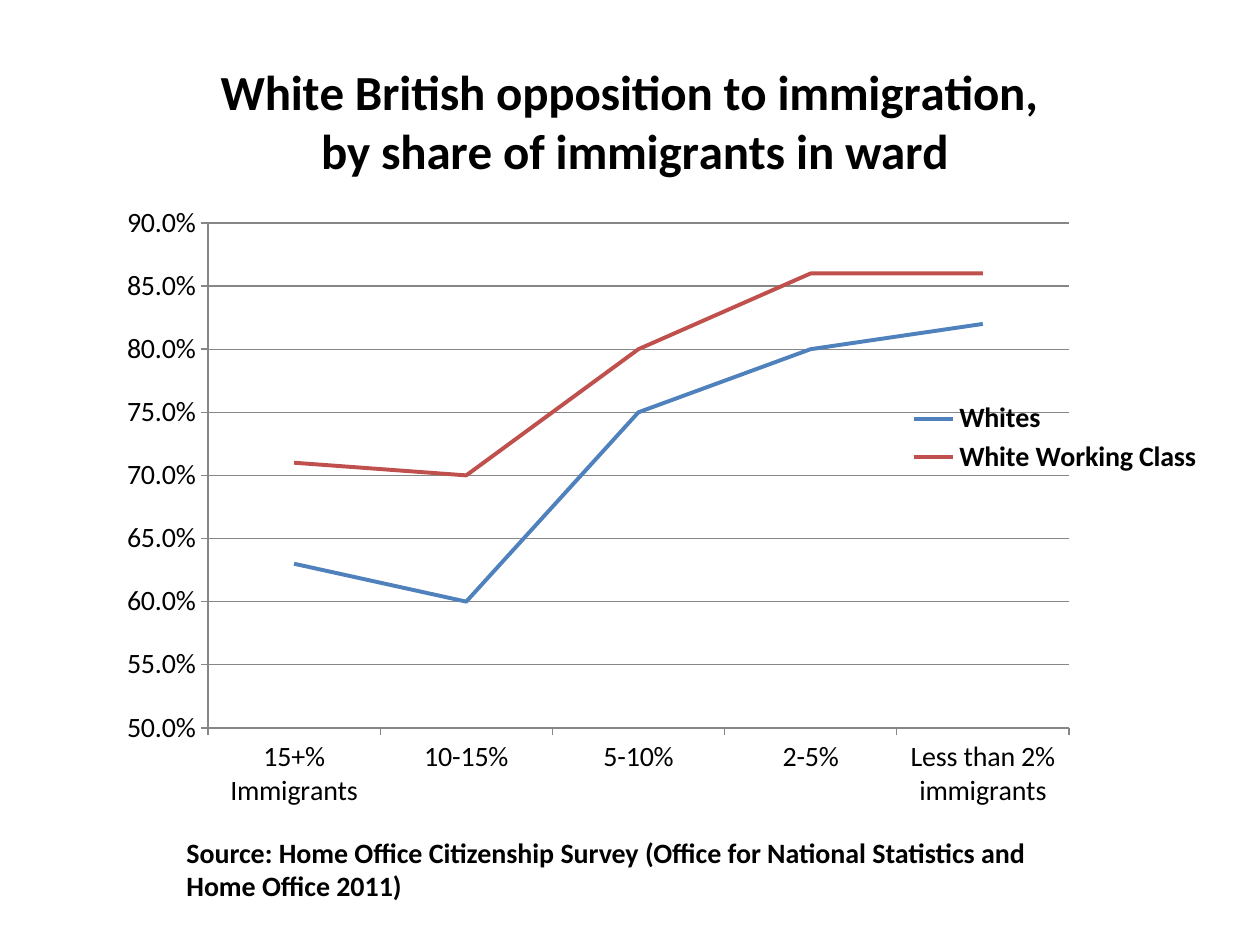
from dataclasses import dataclass

from lxml.etree import SubElement
from pptx import Presentation
from pptx.chart.data import CategoryChartData
from pptx.dml.color import RGBColor
from pptx.enum.chart import XL_CHART_TYPE, XL_LEGEND_POSITION, XL_TICK_MARK
from pptx.oxml.ns import qn
from pptx.util import Emu, Pt


@dataclass(frozen=True)
class Theme:
    """Colours and type sizes of the slide."""
    font: str = "Calibri"
    ink: RGBColor = RGBColor(0x00, 0x00, 0x00)
    rule: RGBColor = RGBColor(0x86, 0x86, 0x86)
    whites: RGBColor = RGBColor(0x4F, 0x81, 0xBD)
    working_class: RGBColor = RGBColor(0xC0, 0x50, 0x4D)
    title: Pt = Pt(28)
    body: Pt = Pt(16)
    rule_width: Pt = Pt(0.75)
    series_width: Pt = Pt(2.25)


THEME = Theme()
WARD_SHARES = ["15+% Immigrants", "10-15%", "5-10%", "2-5%", "Less than 2% immigrants"]
OPPOSITION = [
    ("Whites", [0.63, 0.6, 0.75, 0.8, 0.82], THEME.whites),
    ("White Working Class", [0.71, 0.7, 0.8, 0.86, 0.86], THEME.working_class),
]
TITLE_LINES = ["White British opposition to immigration, ", "by share of immigrants in ward"]
SOURCE_NOTE = ("Source: Home Office Citizenship Survey "
               "(Office for National Statistics and Home Office 2011)")


def px(length):
    """Turn pixels, 126 to the inch, into EMU."""
    return Emu(round(length * 914400 / 126))


def style_font(font, size, bold=False):
    """Apply the slide's typeface and ink to a font."""
    font.name, font.size, font.bold = THEME.font, size, bold
    font.color.rgb = THEME.ink


def style_line(line, colour, width):
    """Give a line its colour and width."""
    line.color.rgb, line.width = colour, width


def set_layout(element, index, chart_size, *box):
    """Place a chart part at a left, top[, width, height] in px within the chart."""
    for old in element.findall(qn("c:layout")):
        element.remove(old)
    layout = SubElement(element, qn("c:layout"))
    manual = SubElement(layout, qn("c:manualLayout"))
    settings = {"layoutTarget": "inner"} if element.tag == qn("c:plotArea") else {}
    settings.update(xMode="edge", yMode="edge")
    settings.update((name, length / whole)
                    for name, length, whole in zip("xywh", box, chart_size * 2))
    for name, value in settings.items():
        SubElement(manual, qn(f"c:{name}")).set("val", str(value))
    element.insert(index, layout)


def style_axis(axis):
    """Format the labels, ticks and line of an axis."""
    axis.major_tick_mark = XL_TICK_MARK.OUTSIDE
    axis.minor_tick_mark = XL_TICK_MARK.NONE
    style_font(axis.tick_labels.font, THEME.body)
    style_line(axis.format.line, THEME.rule, THEME.rule_width)


def add_title(chart, chart_size):
    """Write the two-line chart title."""
    frame = chart.chart_title.text_frame
    frame.text = "\n".join(TITLE_LINES)
    for paragraph in frame.paragraphs:
        style_font(paragraph.font, THEME.title, bold=True)
    set_layout(chart.chart_title._element, 1, chart_size, 163, 21)


def add_legend(chart, chart_size):
    """Lay the legend over the right of the plot."""
    chart.has_legend = True
    legend = chart.legend
    legend.position = XL_LEGEND_POSITION.RIGHT
    legend.include_in_layout = False
    style_font(legend.font, THEME.body, bold=True)
    set_layout(legend._element, 1, chart_size, 850, 360, 302, 82)


def add_opposition_chart(slide, left, top, width, height):
    """Draw opposition by ward share as a line chart in the given box."""
    data = CategoryChartData(number_format="0.0%")
    data.categories = WARD_SHARES
    for name, shares, _ in OPPOSITION:
        data.add_series(name, shares)
    chart = slide.shapes.add_chart(
        XL_CHART_TYPE.LINE, px(left), px(top), px(width), px(height), data).chart
    chart.font.name = THEME.font
    for series, (_, _, colour) in zip(chart.plots[0].series, OPPOSITION):
        series.smooth = False
        style_line(series.format.line, colour, THEME.series_width)
    chart.plots[0].vary_by_categories = False
    style_axis(chart.category_axis)
    shares_axis = chart.value_axis
    style_axis(shares_axis)
    shares_axis.minimum_scale, shares_axis.maximum_scale = 0.5, 0.9
    shares_axis.major_unit = 0.05
    shares_axis.tick_labels.number_format = "0.0%"
    shares_axis.tick_labels.number_format_is_linked = False
    style_line(shares_axis.major_gridlines.format.line, THEME.rule, THEME.rule_width)
    chart_size = (width, height)
    add_title(chart, chart_size)
    add_legend(chart, chart_size)
    set_layout(chart._chartSpace.chart.plotArea, 0, chart_size, 154, 186, 861, 505)


def add_source_note(slide, left, top, width, height):
    """Write the source of the figures in the given box."""
    frame = slide.shapes.add_textbox(px(left), px(top), px(width), px(height)).text_frame
    frame.word_wrap = True
    frame.text = SOURCE_NOTE
    style_font(frame.paragraphs[0].font, THEME.body, bold=True)


def main():
    """Build and save the slide."""
    deck = Presentation()
    deck.slide_width, deck.slide_height = px(1260), px(945)
    slide = deck.slides.add_slide(deck.slide_layouts[6])
    add_opposition_chart(slide, 54, 37, 1160, 804)
    add_source_note(slide, 174, 829, 912, 81)
    deck.save("out.pptx")


if __name__ == "__main__":
    main()
